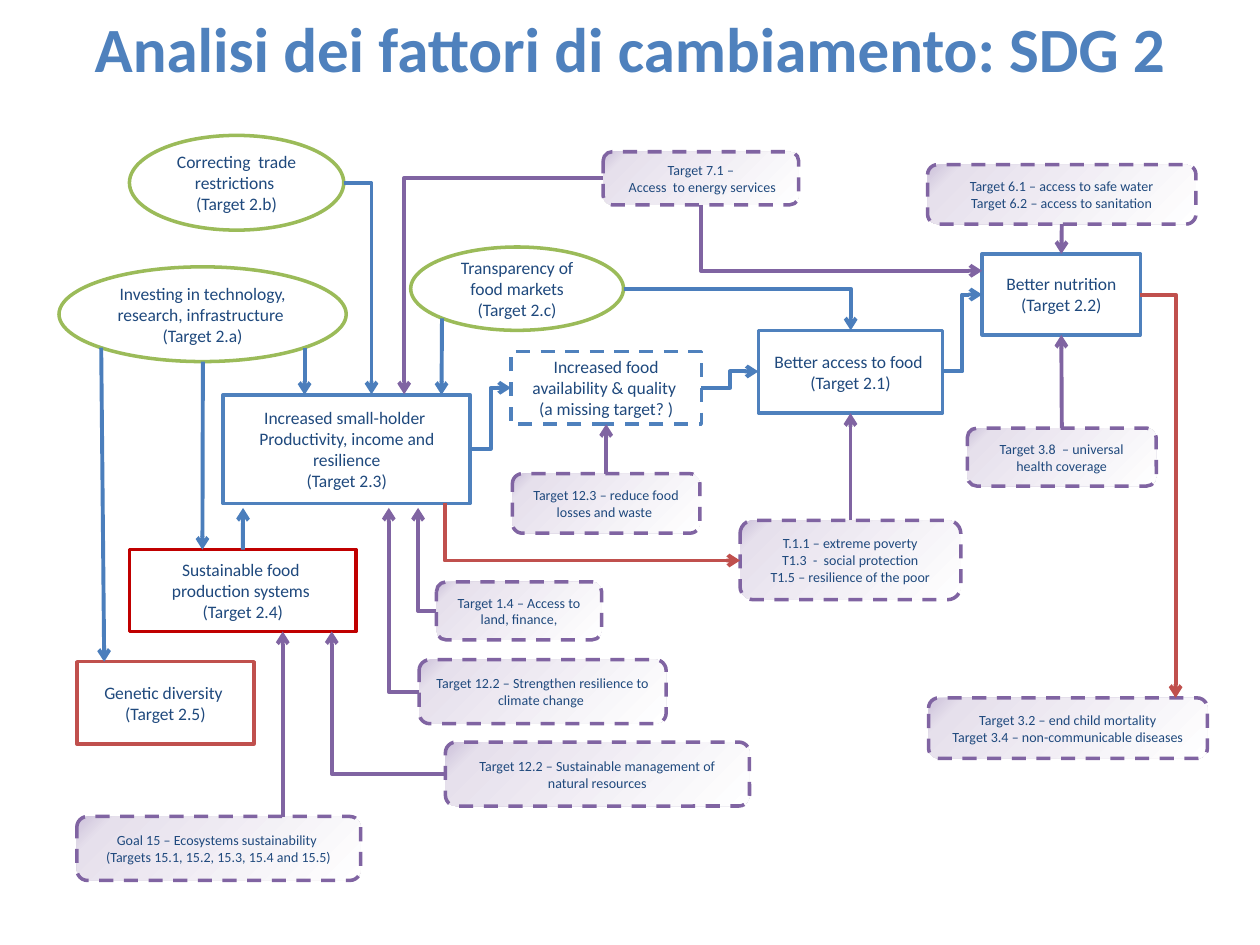
from copy import deepcopy
from pptx import Presentation
from pptx.dml.color import RGBColor
from pptx.enum.dml import MSO_LINE
from pptx.enum.shapes import MSO_CONNECTOR, MSO_SHAPE
from pptx.enum.text import MSO_ANCHOR, MSO_AUTO_SIZE, PP_ALIGN
from pptx.oxml.ns import qn
from pptx.util import Cm, Pt
from lxml.etree import SubElement

HUES = {"blue": "4F81BD", "arrow": "4B7EBC", "green": "9BBB59", "red": "C0504D",
        "dark": "C00000", "plum": "8064A2", "navy": "1F497D", "white": "FFFFFF",
        "lilac": "CCC1DA", "pale": "E6E0EC"}
RGB = {name: RGBColor.from_string(code) for name, code in HUES.items()}


def write(frame, text, size, hue, bold=False):
    frame.word_wrap = True
    frame.vertical_anchor = MSO_ANCHOR.MIDDLE
    for i, part in enumerate(text.split("\n")):
        para = frame.add_paragraph() if i else frame.paragraphs[0]
        para.alignment = PP_ALIGN.CENTER
        for j, line in enumerate(part.split("\v")):
            if j:
                para.add_line_break()
            run = para.add_run()
            run.text = line
            run.font.name = "Calibri"
            run.font.size = Pt(size)
            run.font.bold = bold
            run.font.color.rgb = RGB[hue]


deck = Presentation()
deck.slide_width, deck.slide_height = Cm(25.4), Cm(19.05)
slide = deck.slides.add_slide(deck.slide_layouts[5])

title = slide.shapes.title
title.left, title.top, title.width, title.height = Cm(0.3), Cm(0), Cm(25.1), Cm(1.92)
title.text_frame.auto_size = MSO_AUTO_SIZE.NONE
write(title.text_frame, "Analisi dei fattori di cambiamento: SDG 2 ", 36, "blue", True)

KINDS = {
    "goal": (MSO_SHAPE.RECTANGLE, "blue", 10),
    "gap": (MSO_SHAPE.RECTANGLE, "blue", 10),
    "base": (MSO_SHAPE.RECTANGLE, "dark", 10),
    "gene": (MSO_SHAPE.RECTANGLE, "red", 10),
    "means": (MSO_SHAPE.OVAL, "green", 10),
    "link": (MSO_SHAPE.ROUNDED_RECTANGLE, "plum", 8),
}
BOXES = [
    ("yield", "goal", 4.5, 7.96, 4.98, 2.19,
     "Increased small-holder \nProductivity, income and resilience\v(Target 2.3)"),
    ("stock", "gap", 10.3, 7.09, 3.84, 1.46,
     "Increased food availability & quality \v(a missing target? )"),
    ("access", "goal", 15.29, 6.66, 3.71, 1.67, "Better access to food \n(Target 2.1)"),
    ("diet", "goal", 19.8, 5.12, 3.19, 1.63, "Better nutrition\n(Target 2.2)"),
    ("tech", "means", 1.19, 5.38, 5.79, 1.91,
     "Investing in technology, research, infrastructure \v(Target 2.a)"),
    ("farm", "base", 2.61, 11.08, 4.57, 1.65,
     "Sustainable food \vproduction systems \n(Target 2.4)"),
    ("genes", "gene", 1.55, 13.34, 3.57, 1.66, "Genetic diversity \n(Target 2.5)"),
    ("poor", "link", 14.92, 10.49, 4.45, 1.6,
     "T.1.1 – extreme poverty\nT1.3  -  social protection\nT1.5 – resilience of the poor"),
    ("land", "link", 8.8, 11.73, 3.33, 1.17, "Target 1.4 – Access to land, finance,"),
    ("health", "link", 19.5, 8.63, 3.81, 1.17, "Target 3.8  – universal health coverage"),
    ("water", "link", 18.7, 3.32, 5.41, 1.2,
     "Target 6.1 – access to safe water\nTarget 6.2 – access to sanitation"),
    ("power", "link", 12.16, 3.06, 3.94, 1.07, "Target 7.1 –\v Access  to energy services"),
    ("nature", "link", 8.98, 14.96, 6.13, 1.29,
     "Target 12.2 – Sustainable management of natural resources"),
    ("climate", "link", 8.45, 13.3, 4.98, 1.29,
     "Target 12.2 – Strengthen resilience to climate change "),
    ("eco", "link", 1.55, 16.46, 5.72, 1.29,
     "Goal 15 – Ecosystems sustainability \n(Targets 15.1, 15.2, 15.3, 15.4 and 15.5)"),
    ("trade", "means", 2.61, 2.73, 4.32, 1.91, "Correcting  trade restrictions  (Target 2.b)"),
    ("market", "means", 8.28, 4.98, 4.29, 1.68, "Transparency of food markets (Target 2.c)"),
    ("loss", "link", 10.33, 9.55, 3.78, 1.2, "Target 12.3 – reduce food losses and waste "),
    ("death", "link", 18.72, 14.07, 5.62, 1.22,
     "Target 3.2 – end child mortality\nTarget 3.4 – non-communicable diseases"),
]
shapes = {}
for name, kind, x, y, w, h, text in BOXES:
    form, hue, size = KINDS[kind]
    box = slide.shapes.add_shape(form, Cm(x), Cm(y), Cm(w), Cm(h))
    box.shadow.inherit = False
    box.line.color.rgb = RGB[hue]
    box.line.width = Pt(2)
    if kind in ("gap", "link"):
        box.line.dash_style = MSO_LINE.DASH
    if kind == "link":
        box.fill.gradient()
        box.fill.gradient_angle = 315
        stops = box.element.spPr.find(".//" + qn("a:gsLst"))
        stops.insert(1, deepcopy(stops[0]))
        for stop, (spot, tint) in zip(box.fill.gradient_stops,
                                      [(0, "lilac"), (0.11, "pale"), (1, "white")]):
            stop.position = spot
            stop.color.rgb = RGB[tint]
    elif kind == "base":
        box.fill.background()
    else:
        box.fill.solid()
        box.fill.fore_color.rgb = RGB["white"]
    write(box.text_frame, text, size, "navy")
    shapes[name] = box

ROUTES = [
    ("side", "plum", 12.16, 3.59, 8.15, 7.95),
    ("step", "arrow", 9.48, 9.05, 10.3, 7.82),
    ("step", "arrow", 14.14, 7.82, 15.29, 7.49),
    ("step", "arrow", 19, 7.49, 19.8, 5.94),
    ("side", "plum", 8.8, 12.32, 8.43, 10.24),
    ("side", "arrow", 6.93, 3.69, 7.49, 7.95),
    ("side", "arrow", 12.57, 5.82, 17.15, 6.66),
    ("side", "plum", 8.98, 15.6, 6.69, 12.73),
    ("side", "plum", 8.45, 13.95, 7.84, 10.24),
    ("drop", "plum", 14.13, 4.13, 19.8, 5.46),
    ("drop", "red", 8.97, 10.15, 14.92, 11.3),
    ("side", "red", 22.99, 5.94, 23.7, 14.07),
    ("line", "arrow", 6.14, 7.01, 6.14, 7.96),
    ("line", "arrow", 4.09, 7.29, 4.08, 11.08),
    ("line", "arrow", 2.04, 7.01, 2.1, 13.34),
    ("line", "arrow", 8.91, 6.42, 8.9, 7.96),
    ("line", "plum", 5.7, 16.46, 5.7, 12.73),
    ("line", "arrow", 4.9, 11.08, 4.9, 10.24, ("farm", 0)),
    ("line", "plum", 21.4, 4.52, 21.4, 5.12, ("water", 2), ("diet", 0)),
    ("line", "plum", 21.4, 8.63, 21.4, 6.75, ("health", 0), ("diet", 2)),
    ("line", "plum", 17.15, 10.49, 17.15, 8.33, ("poor", 0), ("access", 2)),
    ("line", "plum", 12.22, 9.55, 12.22, 8.55, ("loss", 0), ("stock", 2)),
]
for form, hue, *ends in ROUTES:
    kind = MSO_CONNECTOR.STRAIGHT if form == "line" else MSO_CONNECTOR.ELBOW
    wire = slide.shapes.add_connector(kind, *[Cm(v) for v in ends[:4]])
    for join, (name, side) in zip((wire.begin_connect, wire.end_connect), ends[4:]):
        join(shapes[name], side)
    wire.line.color.rgb = RGB[hue]
    wire.line.width = Pt(2.25)
    props = wire.element.spPr
    geom = props.find(qn("a:prstGeom"))
    if form == "side":
        geom.set("prst", "bentConnector2")
    elif form == "drop":
        SubElement(geom.find(qn("a:avLst")), qn("a:gd"), name="adj1", fmla="val 0")
    SubElement(props.find(qn("a:ln")), qn("a:tailEnd"), type="arrow")
    SubElement(props, qn("a:effectLst"))

deck.save("out.pptx")
